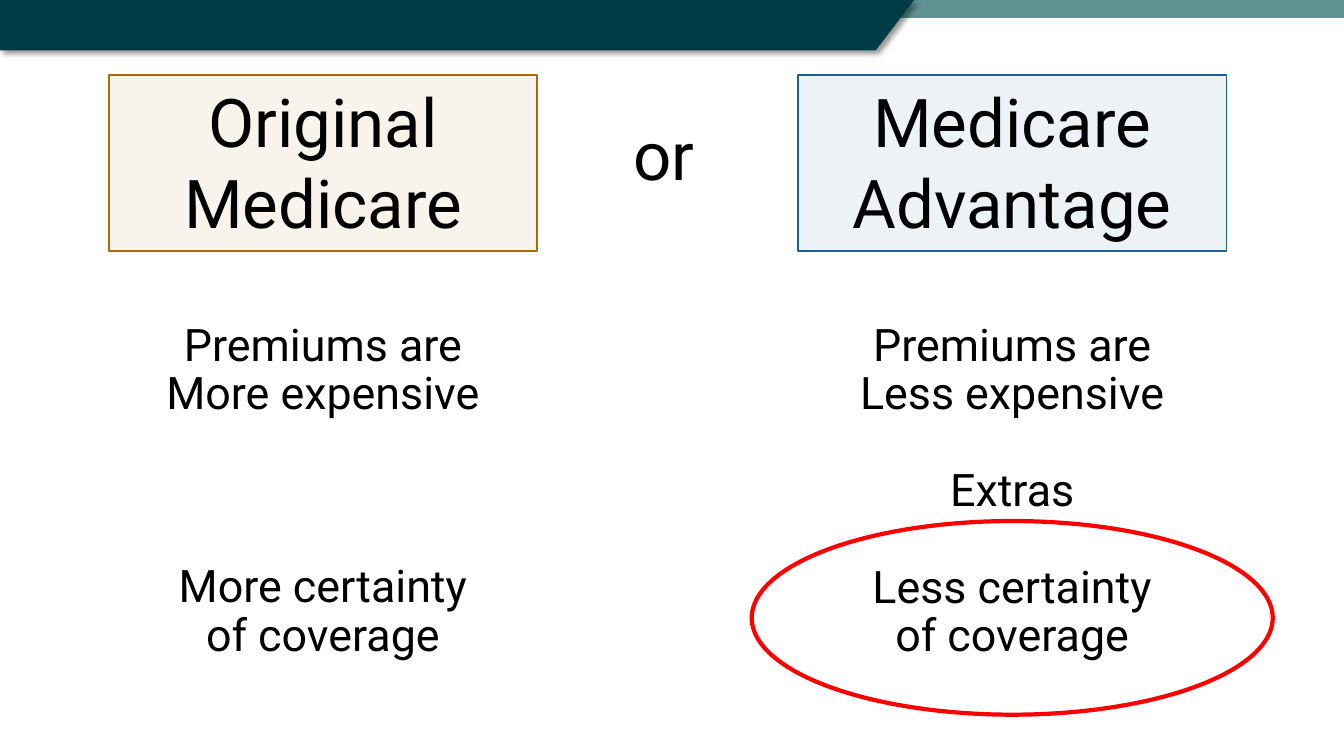
from lxml import etree
from pptx import Presentation
from pptx.dml.color import RGBColor
from pptx.enum.shapes import MSO_SHAPE
from pptx.enum.text import MSO_ANCHOR, MSO_AUTO_SIZE, PP_ALIGN
from pptx.oxml.ns import qn
from pptx.util import Cm, Pt

RECT = MSO_SHAPE.RECTANGLE
OVAL = MSO_SHAPE.OVAL
CENTER = PP_ALIGN.CENTER
TOP = MSO_ANCHOR.TOP
NO_FIT = MSO_AUTO_SIZE.NONE

BLACK = RGBColor(0, 0, 0)
DARK = RGBColor(0x00, 0x3C, 0x46)
TEAL = RGBColor(0x5D, 0x92, 0x92)
BROWN = RGBColor(0xAC, 0x69, 0x07)
BLUE = RGBColor(0x1D, 0x62, 0x94)
RED = RGBColor(0xFF, 0, 0)

WIDTH, HEIGHT = 33.87, 19.05
LEFT, MID, RIGHT = 8.14, 16.73, 25.51  # column centres
HEAD_TOP = 1.9
LINE = 34.5  # height of one list line in points


class Deck:
    """Holds the text style and the slide being drawn."""

    def __init__(self, slide):
        self.slide = slide
        self.shapes = slide.shapes
        self.font = "Roboto"

    def text(self, index, lines, mid, top, width, height,
             size=48, pitch=1.0, gaps=()):
        """Fill a placeholder; gaps maps a line number to blank lines above it."""
        box = self.slide.placeholders[index]
        self.shapes._spTree.append(box._element)
        box.left, box.top = Cm(mid - width / 2), Cm(top)
        box.width, box.height = Cm(width), Cm(height)
        frame = box.text_frame
        frame.text = "\n".join(lines)
        frame.word_wrap = True
        frame.auto_size = NO_FIT
        frame.vertical_anchor = TOP
        blanks = dict(gaps)
        for row, para in enumerate(frame.paragraphs):
            para.alignment = CENTER
            para.line_spacing = pitch
            para.space_before = Pt(LINE * blanks.get(row, 0))
            para.space_after = Pt(0)
            props = para._p.get_or_add_pPr()
            props.set("marL", "0")
            props.set("indent", "0")
            etree.SubElement(props, qn("a:buNone"))
            font = para.runs[0].font
            font.name, font.size, font.bold = self.font, Pt(size), False
            font.color.rgb = BLACK

    def shape(self, kind, mid, top, width, height,
              fill=None, alpha=100, line=None, weight=1.25):
        item = self.shapes.add_shape(
            kind, Cm(mid - width / 2), Cm(top), Cm(width), Cm(height))
        item.shadow.inherit = False
        item.line.color.rgb = line or fill
        item.line.width = Pt(weight)
        if fill is None:
            item.fill.background()
            return
        item.fill.solid()
        item.fill.fore_color.rgb = fill
        if alpha < 100:
            tint = item._element.spPr.find(".//" + qn("a:srgbClr"))
            etree.SubElement(tint, qn("a:alpha"), val=str(alpha * 1000))

    def banner(self, points, fill):
        """Draw a closed outline with a soft shadow at its lower right."""
        first, *rest = [(Cm(x), Cm(y)) for x, y in points]
        pen = self.shapes.build_freeform(*first)
        pen.add_line_segments(rest, close=True)
        item = pen.convert_to_shape()
        item.fill.solid()
        item.fill.fore_color.rgb = fill
        item.line.fill.background()
        item.shadow.inherit = False
        glow = item._element.spPr.find(qn("a:effectLst"))
        shade = etree.SubElement(
            glow, qn("a:outerShdw"), blurRad=str(Pt(4)), dist=str(Pt(3)),
            dir=str(45 * 60000), algn="tl", rotWithShape="0")
        tone = etree.SubElement(shade, qn("a:srgbClr"), val=str(BLACK))
        etree.SubElement(tone, qn("a:alpha"), val="40000")


def main():
    prs = Presentation()
    prs.slide_width, prs.slide_height = Cm(WIDTH), Cm(HEIGHT)
    layout = prs.slide_layouts.get_by_name("Comparison")
    deck = Deck(prs.slides.add_slide(layout))

    deck.shape(RECT, WIDTH / 2, 0, WIDTH, 0.43, fill=TEAL)
    deck.banner([(0, 0), (23.04, 0), (22.07, 1.27), (0, 1.27)], DARK)
    deck.text(0, ["or"], MID, 2.74, 12.27, 4.42)

    plans = [
        (1, LEFT, BROWN, ["Original", "Medicare"],
         ["Premiums are", "More expensive",
          "More certainty", "of coverage"], {2: 3}),
        (3, RIGHT, BLUE, ["Medicare", "Advantage"],
         ["Premiums are", "Less expensive", "Extras",
          "Less certainty", "of coverage"], {2: 1, 3: 1}),
    ]
    for index, mid, color, head, points, gaps in plans:
        deck.shape(RECT, mid, HEAD_TOP, 10.8, 4.42,
                   fill=color, alpha=8, line=color)
        deck.text(index, head, mid, HEAD_TOP, 12.27, 5.31)
        deck.text(index + 1, points, mid, 8, 13.54, 8.86,
                  size=32, pitch=0.9, gaps=gaps)

    deck.shape(OVAL, RIGHT, 13.13, 13.13, 4.88, line=RED, weight=3)
    prs.save("out.pptx")


if __name__ == "__main__":
    main()
